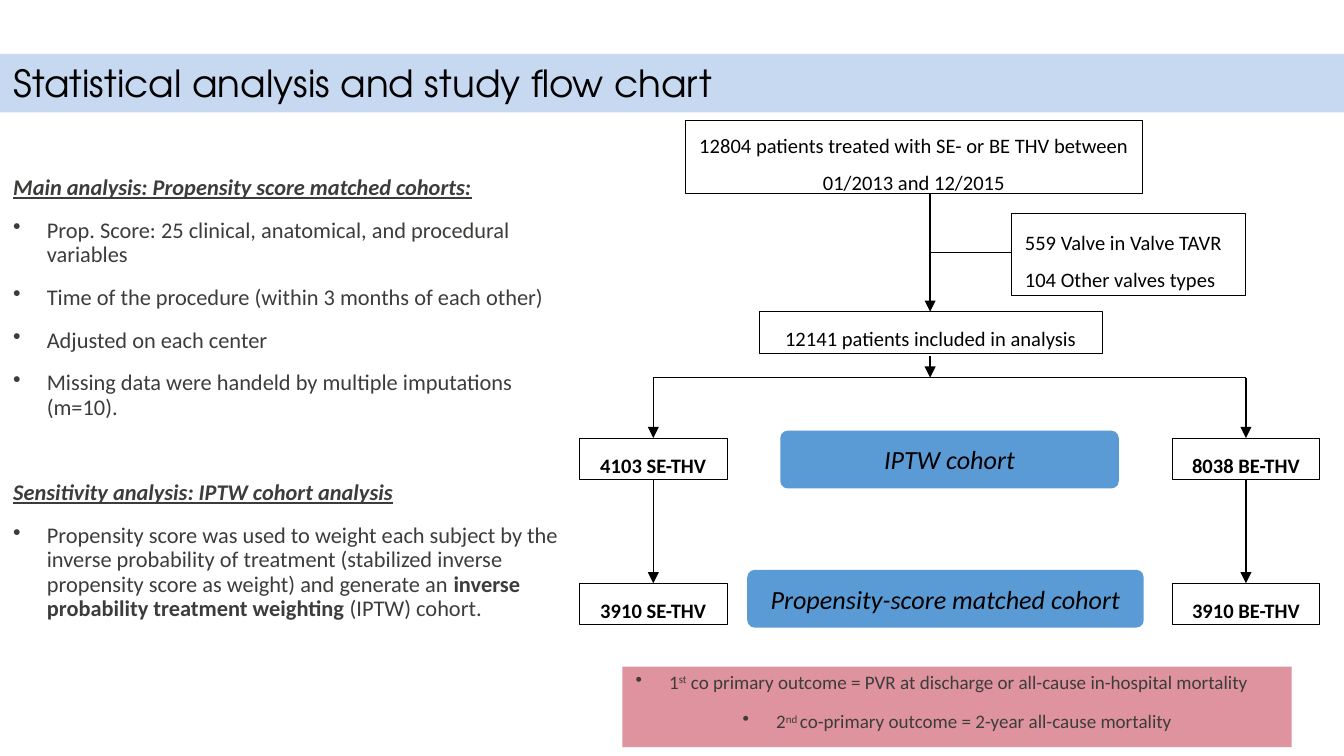
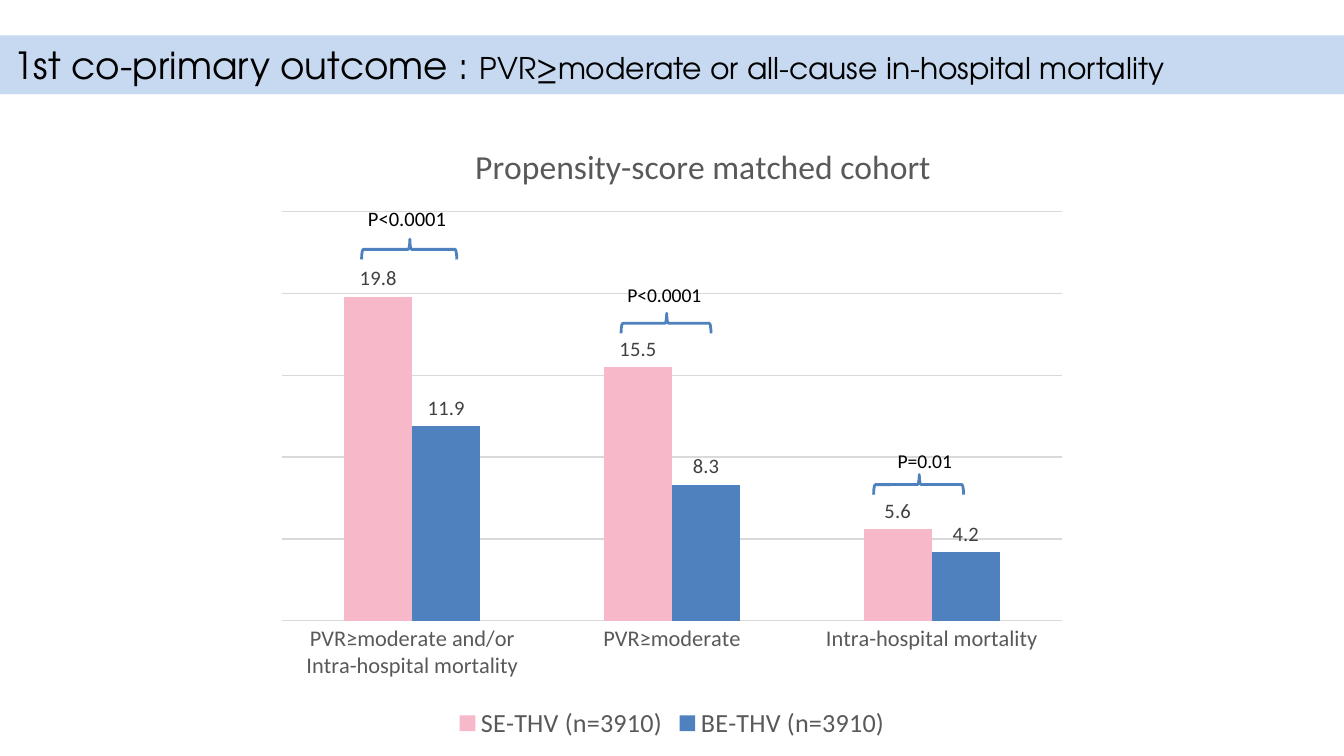
from pptx import Presentation
from pptx.chart.data import CategoryChartData
from pptx.dml.color import RGBColor
from pptx.enum.chart import XL_CHART_TYPE, XL_LABEL_POSITION, XL_LEGEND_POSITION, XL_TICK_MARK
from pptx.enum.shapes import MSO_CONNECTOR, MSO_SHAPE
from pptx.enum.text import MSO_ANCHOR, PP_ALIGN
from pptx.oxml.ns import qn
from pptx.oxml.xmlchemy import OxmlElement
from pptx.util import Pt

BLACK = RGBColor(0x00, 0x00, 0x00)
WHITE = RGBColor(0xFF, 0xFF, 0xFF)
INK = RGBColor(0x3C, 0x3C, 0x3B)
BAND = RGBColor(0xC6, 0xD9, 0xF1)
PILL = RGBColor(0x5B, 0x9B, 0xD5)
ROSE = RGBColor(0xDE, 0x93, 0x9E)
PINK = RGBColor(0xF7, 0xB8, 0xC9)
BLUE = RGBColor(0x4E, 0x81, 0xBD)
GREY = RGBColor(0x59, 0x59, 0x59)
DARK = RGBColor(0x40, 0x40, 0x40)
PALE = RGBColor(0xD9, 0xD9, 0xD9)

HEAD = {"name": "TeX Gyre Adventor", "size": Pt(20)}
BODY = {"name": "Calibri", "size": Pt(12)}
NODE = {"name": "Calibri", "size": Pt(11)}
TAG = {"name": "Calibri", "size": Pt(14), "italic": True}
NOTE = {"name": "Calibri", "size": Pt(10.2)}
LEAD = {"bold": True, "italic": True, "underline": True}
BOLD = {"bold": True}
SUPER = {"raised": True}

LEFT, MID, RIGHT = 350, 498.3, 667.5
FORK, ROW1, ROW2 = 202.3, 234.7, 312.5
NODE_W, NODE_H = 79.2, 22.3
LIST = {"line_spacing": 0.9, "space_before": Pt(10)}
LOOSE = {"line_spacing": 1.5}
CENTER = {"alignment": PP_ALIGN.CENTER}


def style(item, form):
    """Set each value of a format dict on an object."""
    for key, val in form.items():
        setattr(item, key, val)


def paint(font, form, color):
    """Give a font its format and color."""
    style(font, form)
    font.color.rgb = color


def bullet(para):
    """Give a paragraph a round bullet and a hanging indent."""
    props = para._p.get_or_add_pPr()
    props.set("marL", str(Pt(18)))
    props.set("indent", str(-Pt(18)))
    mark = OxmlElement("a:buChar")
    mark.set("char", "•")
    props.append(mark)


def write(frame, paras, font, color=BLACK):
    """Fill a frame with (runs, format, dotted) paragraphs."""
    frame.word_wrap = True
    for num, (runs, form, dotted) in enumerate(paras):
        para = frame.add_paragraph() if num else frame.paragraphs[0]
        style(para, {"alignment": PP_ALIGN.LEFT, **form})
        if dotted:
            bullet(para)
        for text, extra in runs:
            run = para.add_run()
            run.text = text
            look = {**font, **extra}
            if look.pop("raised", False):
                run._r.get_or_add_rPr().set("baseline", "30000")
            paint(run.font, look, color)


def block(slide, kind, at, fill=None, line=None, width=0.5):
    """Add a flat preset shape."""
    shape = slide.shapes.add_shape(kind, *map(Pt, at))
    shape.shadow.inherit = False
    for part, color in ((shape.fill, fill), (shape.line.fill, line)):
        if color is None:
            part.background()
        else:
            part.solid()
            part.fore_color.rgb = color
    if line is not None:
        shape.line.width = Pt(width)
    return shape


def band(slide, top, runs):
    """Add the title band."""
    shape = block(slide, MSO_SHAPE.RECTANGLE, (0, top, 720, 31.5), BAND)
    shape.text_frame.vertical_anchor = MSO_ANCHOR.TOP
    write(shape.text_frame, [(runs, {}, False)], HEAD)


def node(slide, at, lines, extra={}, form=CENTER):
    """Add a framed box of the flow chart."""
    shape = block(slide, MSO_SHAPE.RECTANGLE, at, WHITE, BLACK)
    paras = [([(text, extra)], {**LOOSE, **form}, False) for text in lines]
    write(shape.text_frame, paras, NODE)


def pill(slide, at, text):
    """Add a rounded cohort label."""
    shape = block(slide, MSO_SHAPE.ROUNDED_RECTANGLE, at, PILL)
    shape.adjustments[0] = 0.13
    write(shape.text_frame, [([(text, {})], CENTER, False)], TAG)


def link(slide, start, end, arrow=True):
    """Add a black line, with an arrowhead if wanted."""
    wire = slide.shapes.add_connector(MSO_CONNECTOR.STRAIGHT, *map(Pt, start + end))
    wire.line.color.rgb = BLACK
    wire.line.width = Pt(0.75)
    if arrow:
        tail = OxmlElement("a:tailEnd")
        tail.set("type", "triangle")
        wire.line._get_or_add_ln().append(tail)
    wire._element.spPr.append(OxmlElement("a:effectLst"))


def label(slide, at, paras, font, color=BLACK):
    """Add a text box."""
    write(slide.shapes.add_textbox(*map(Pt, at)).text_frame, paras, font, color)


def brace(slide, x, y, span):
    """Add a brace that opens downward, centred on a point."""
    shape = block(slide, MSO_SHAPE.LEFT_BRACE, (x - 5.4, y - span / 2, 10.8, span), line=BLUE, width=1.5)
    shape.rotation = 90
    shape.adjustments[0] = 0.083
    shape.adjustments[1] = 0.493


def place(host, index, spots):
    """Give a chart part a manual layout."""
    for old in host.findall(qn("c:layout")):
        host.remove(old)
    layout, manual = OxmlElement("c:layout"), OxmlElement("c:manualLayout")
    layout.append(manual)
    for tag, val in spots.items():
        item = OxmlElement("c:" + tag)
        item.set("val", str(val))
        manual.append(item)
    host.insert(index, layout)


def columns(slide, at, title, cats, rows):
    """Add the clustered column chart."""
    data = CategoryChartData(number_format="0.0")
    data.categories = cats
    for name, vals, _ in rows:
        data.add_series(name, vals)
    chart = slide.shapes.add_chart(XL_CHART_TYPE.COLUMN_CLUSTERED, *map(Pt, at), data).chart
    paint(chart.font, {"name": "Calibri", "size": Pt(10)}, BLACK)
    chart.has_title = True
    write(chart.chart_title.text_frame, [([(title, {})], CENTER, False)],
          {"name": "Calibri", "size": Pt(18), "bold": False}, GREY)
    chart.has_legend = True
    style(chart.legend, {"position": XL_LEGEND_POSITION.BOTTOM, "include_in_layout": False})
    paint(chart.legend.font, {"name": "Calibri", "size": Pt(14)}, GREY)
    axis = chart.category_axis
    style(axis, {"major_tick_mark": XL_TICK_MARK.NONE, "minor_tick_mark": XL_TICK_MARK.NONE})
    paint(axis.tick_labels.font, BODY, GREY)
    scale = chart.value_axis
    style(scale, {"visible": False, "minimum_scale": 0, "maximum_scale": 25,
                  "major_unit": 5, "has_major_gridlines": True})
    for line in (axis.format.line, scale.major_gridlines.format.line):
        line.color.rgb = PALE
        line.width = Pt(0.75)
    plot = chart.plots[0]
    style(plot, {"gap_width": 182, "overlap": 0, "vary_by_categories": False})
    for series, (_, _, color) in zip(plot.series, rows):
        series.format.fill.solid()
        series.format.fill.fore_color.rgb = color
        tags = series.data_labels
        style(tags, {"show_value": True, "position": XL_LABEL_POSITION.OUTSIDE_END,
                     "number_format": "0.0", "number_format_is_linked": False})
        paint(tags.font, NODE, DARK)
    root = chart.element
    place(root.find(".//" + qn("c:title")), 1, {"xMode": "edge", "yMode": "edge", "x": 0.25, "y": 0.02})
    place(root.find(".//" + qn("c:plotArea")), 0,
          {"layoutTarget": "inner", "xMode": "edge", "yMode": "edge",
           "x": 0.02, "y": 0.14, "w": 0.96, "h": 0.66})


def flow(slide):
    """Build the study flow chart slide."""
    band(slide, 28.8, [("Statistical analysis and study flow chart", {})])
    steps = ["Prop. Score: 25 clinical, anatomical, and procedural variables",
             "Time of the procedure (within 3 months of each other)",
             "Adjusted on each center",
             "Missing data were handeld by multiple imputations (m=10)."]
    weight = [("Propensity score was used to weight each subject by the inverse probability of treatment "
               "(stabilized inverse propensity score as weight) and generate an ", {}),
              ("inverse probability treatment weighting", BOLD), (" (IPTW) cohort.", {})]
    paras = [([("Main analysis: Propensity score matched cohorts:", LEAD)], LIST, False)]
    paras += [([(step, {})], LIST, True) for step in steps]
    paras += [([("Sensitivity analysis: IPTW cohort analysis", LEAD)],
               {**LIST, "space_before": Pt(33)}, False), (weight, LIST, True)]
    label(slide, (0, 90.7, 310.3, 300), paras, BODY, INK)

    node(slide, (367.2, 64.8, 244.8, 38.9),
         ["12804 patients treated with SE- or BE THV between 01/2013 and 12/2015"])
    node(slide, (542, 114.5, 125.3, 43.9), ["559 Valve in Valve TAVR", "104 Other valves types"], form={})
    node(slide, (406.8, 167, 183.6, NODE_H), ["12141 patients included in analysis"])
    for x, arm, counts in ((LEFT, "SE-THV", (4103, 3910)), (RIGHT, "BE-THV", (8038, 3910))):
        for y, count in zip((ROW1, ROW2), counts):
            node(slide, (x - NODE_W / 2, y, NODE_W, NODE_H), [f"{count} {arm}"], BOLD)
        link(slide, (x, FORK), (x, ROW1))
        link(slide, (x, ROW1 + NODE_H), (x, ROW2))
    link(slide, (MID, 103.7), (MID, 167))
    link(slide, (MID, 190.8), (MID, FORK))
    link(slide, (LEFT, FORK), (RIGHT, FORK), False)
    link(slide, (MID, 135.4), (542, 135.4), False)
    pill(slide, (418, 230.7, 181.4, 31), "IPTW cohort")
    pill(slide, (400.3, 305.3, 212.4, 31), "Propensity-score matched cohort")

    goals = block(slide, MSO_SHAPE.RECTANGLE, (333.4, 357.1, 358.6, 43.2), ROSE)
    goals.text_frame.vertical_anchor = MSO_ANCHOR.TOP
    first = [("1", {}), ("st", SUPER),
             (" co primary outcome = PVR at discharge or all-cause in-hospital mortality", {})]
    second = [("2", {}), ("nd ", SUPER), ("co-primary outcome = 2-year all-cause mortality", {})]
    write(goals.text_frame, [(first, LIST, True), (second, {**LIST, **CENTER}, True)], NOTE, INK)


def outcome(slide):
    """Build the first outcome slide."""
    columns(slide, (142.6, 67, 434.9, 332), "Propensity-score matched cohort",
            ["PVR≥moderate and/or Intra-hospital mortality", "PVR≥moderate", "Intra-hospital mortality"],
            [("SE-THV (n=3910)", (19.8, 15.5, 5.6), PINK), ("BE-THV (n=3910)", (11.9, 8.3, 4.2), BLUE)])
    band(slide, 18.9, [("1st co-primary outcome : ", {}),
                       ("PVR≥moderate or all-cause in-hospital mortality", {"size": Pt(16)})])
    for text, size, at, mark in (
            ("P<0.0001", 11, (190, 106.6, 59, 20.5), (219.2, 133.6, 51)),
            ("P<0.0001", 10.5, (329, 148.3, 57.6, 20), (356.8, 173.2, 48.2)),
            ("P=0.01", 10.5, (473.8, 236.9, 46.8, 20), (492.1, 259.6, 48.2))):
        label(slide, at, [([(text, {})], {}, False)], {**NODE, "size": Pt(size)})
        brace(slide, *mark)


def main():
    """Build and save the deck."""
    deck = Presentation()
    style(deck, {"slide_width": Pt(720), "slide_height": Pt(405)})
    for build in (flow, outcome):
        build(deck.slides.add_slide(deck.slide_layouts[6]))
    deck.save("out.pptx")


if __name__ == "__main__":
    main()
